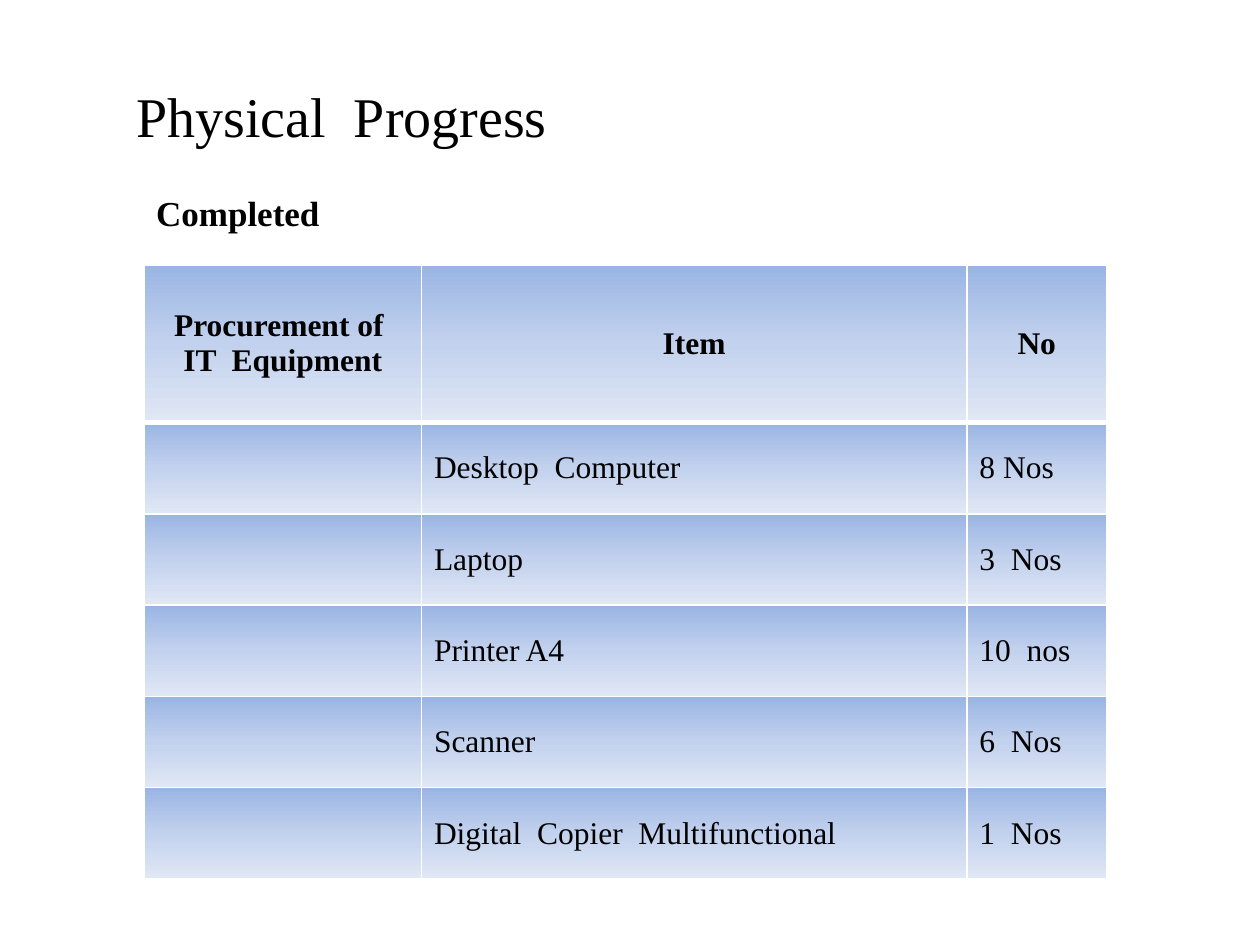
from lxml import etree
from pptx import Presentation
from pptx.dml.color import RGBColor
from pptx.enum.text import MSO_ANCHOR, PP_ALIGN
from pptx.oxml.ns import qn
from pptx.util import Pt

LEFT, CENTER = PP_ALIGN.LEFT, PP_ALIGN.CENTER
MIDDLE, TOP = MSO_ANCHOR.MIDDLE, MSO_ANCHOR.TOP
HUES = {"text": "000000", "line": "FFFFFF",
        "high": "9AB5E4", "mid": "C2D1ED", "low": "E1E8F5"}
STOPS = [(0, "high"), (50, "mid"), (100, "low")]
ROWS = [
    ("Procurement of  IT  Equipment", "Item", "No"),
    ("", "Desktop  Computer", "8 Nos"),
    ("", "Laptop", "3  Nos"),
    ("", "Printer A4", "10  nos"),
    ("", "Scanner", "6  Nos"),
    ("", "Digital  Copier  Multifunctional", "1  Nos"),
]
WIDTHS = [158.4, 311.7, 79.9]
HEIGHTS = [90] + [52.2] * 5


def write(frame, text, size, bold=False, align=LEFT):
    para = frame.paragraphs[0]
    para.alignment = align
    run = para.add_run()
    run.text = text
    run.font.name = "Times New Roman"
    run.font.size = Pt(size)
    run.font.bold = bold
    run.font.color.rgb = RGBColor.from_string(HUES["text"])


def paint(cell, edges):
    props = cell._tc.get_or_add_tcPr()
    for side, width in edges.items():
        line = etree.SubElement(props, qn(f"a:ln{side}"), w=str(Pt(width)))
        fill = etree.SubElement(line, qn("a:solidFill"))
        etree.SubElement(fill, qn("a:srgbClr"), val=HUES["line"])
    grad = etree.SubElement(props, qn("a:gradFill"), rotWithShape="1")
    stops = etree.SubElement(grad, qn("a:gsLst"))
    for place, hue in STOPS:
        stop = etree.SubElement(stops, qn("a:gs"), pos=str(place * 1000))
        etree.SubElement(stop, qn("a:srgbClr"), val=HUES[hue])
    etree.SubElement(grad, qn("a:lin"), ang="5400000", scaled="0")


deck = Presentation()
deck.slide_width, deck.slide_height = Pt(720), Pt(540)
slide = deck.slides.add_slide(deck.slide_layouts[5])

title = slide.shapes.title
title.left, title.top, title.width, title.height = Pt(70.6), Pt(43.2), Pt(595.4), Pt(46)
title.text_frame.vertical_anchor = TOP
write(title.text_frame, "Physical  Progress", 32)

table = slide.shapes.add_table(len(ROWS), len(WIDTHS), Pt(82.4), Pt(151.4),
                               Pt(sum(WIDTHS)), Pt(sum(HEIGHTS))).table
for col, width in zip(table.columns, WIDTHS):
    col.width = Pt(width)
for row, height in zip(table.rows, HEIGHTS):
    row.height = Pt(height)
for r, row in enumerate(ROWS):
    head = r == 0
    edges = {"L": 1, "R": 1, "T": 3 if r == 1 else 1, "B": 3 if head else 1}
    for c, text in enumerate(row):
        cell = table.cell(r, c)
        cell.vertical_anchor = MIDDLE
        if text:
            write(cell.text_frame, text, 18, head, CENTER if head else LEFT)
        paint(cell, edges)

label = slide.shapes.add_textbox(Pt(82.1), Pt(105.8), Pt(175.7), Pt(31.7))
label.text_frame.word_wrap = True
write(label.text_frame, "Completed", 20, True)

deck.save("out.pptx")
